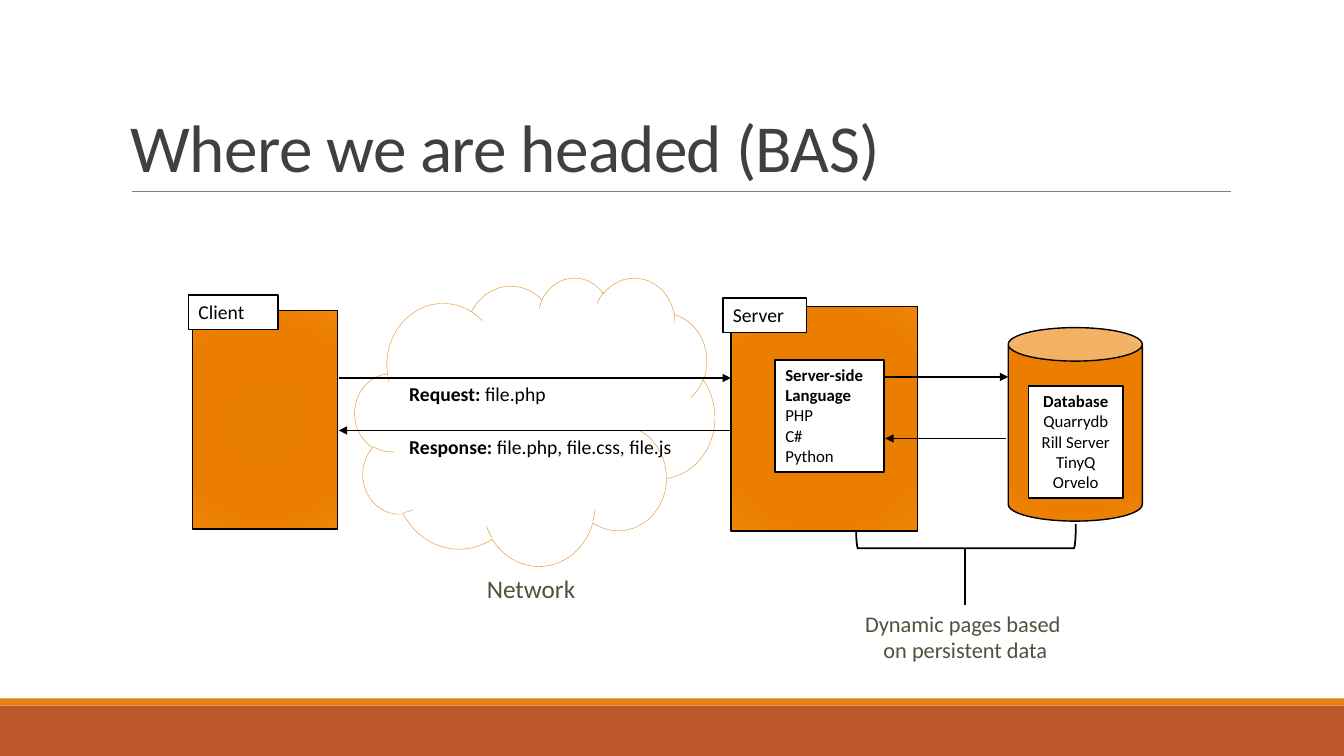
"""Build the slide that shows how a client, a server and a database work together."""
from dataclasses import dataclass

from lxml.etree import SubElement
from pptx import Presentation
from pptx.dml.color import RGBColor
from pptx.enum.shapes import MSO_CONNECTOR, MSO_SHAPE
from pptx.enum.text import MSO_ANCHOR, MSO_AUTO_SIZE, PP_ALIGN
from pptx.oxml.ns import qn
from pptx.util import Emu, Pt

EMU_PER_PX = 9144


@dataclass(frozen=True)
class Theme:
    """Colours, type sizes and line widths of the slide."""
    font: str = "Calibri"
    black: str = "000000"
    white: str = "FFFFFF"
    title: str = "404040"
    caption: str = "4A543E"
    rule: str = "808080"
    orange: str = "E48312"
    rust: str = "BD582C"
    glow: tuple = ((0, "E57B00"), (34, "E87D00"), (70, "EB7E00"), (100, "EF8407"))
    title_size: int = 48
    network_size: int = 18
    caption_size: int = 16
    label_size: int = 14
    list_size: int = 12
    thin: float = 0.25
    rule_width: float = 0.5
    outline: float = 1
    stroke: float = 1.25


THEME = Theme()


def px(*lengths):
    """Turn pixel lengths into EMU."""
    return [Emu(length * EMU_PER_PX) for length in lengths]


def rgb(value):
    """Turn a hex string into a colour."""
    return RGBColor.from_string(value)


def write_text(shape, paragraphs, size=THEME.label_size, color=THEME.black,
               align=PP_ALIGN.LEFT, anchor=MSO_ANCHOR.TOP, wrap=True, grow=True,
               line_spacing=None, tracking=None):
    """Fill a shape with paragraphs, each a list of (text, bold) runs."""
    frame = shape.text_frame
    frame.word_wrap = wrap
    frame.vertical_anchor = anchor
    frame.auto_size = MSO_AUTO_SIZE.SHAPE_TO_FIT_TEXT if grow else MSO_AUTO_SIZE.NONE
    for index, runs in enumerate(paragraphs):
        paragraph = frame.add_paragraph() if index else frame.paragraphs[0]
        paragraph.alignment = align
        paragraph.line_spacing = line_spacing
        for text, bold in runs:
            for line_index, line in enumerate(text.split("\n")):
                if line_index:
                    paragraph.add_line_break()
                if not line:
                    continue
                run = paragraph.add_run()
                run.text = line
                font = run.font
                font.name, font.size, font.bold = THEME.font, Pt(size), bold
                font.color.rgb = rgb(color)
                if tracking:
                    run._r.get_or_add_rPr().set("spc", str(tracking))


def add_text(slide, box, paragraphs, **text_format):
    """Add a text box."""
    write_text(slide.shapes.add_textbox(*px(*box)), paragraphs, **text_format)


def add_figure(slide, kind, box, fill=None, line=None, width=THEME.outline):
    """Add a preset shape with a plain fill and line."""
    shape = slide.shapes.add_shape(kind, *px(*box))
    shape.shadow.inherit = False
    if fill:
        shape.fill.solid()
        shape.fill.fore_color.rgb = rgb(fill)
    else:
        shape.fill.background()
    if line:
        shape.line.color.rgb = rgb(line)
        shape.line.width = Pt(width)
    else:
        shape.line.fill.background()
    return shape


def add_glowing_figure(slide, kind, box):
    """Add an outlined shape with a round orange gradient."""
    shape = add_figure(slide, kind, box, THEME.orange, THEME.black)
    properties = shape._element.spPr
    gradient = SubElement(properties, qn("a:gradFill"), rotWithShape="1")
    stops = SubElement(gradient, qn("a:gsLst"))
    for position, color in THEME.glow:
        stop = SubElement(stops, qn("a:gs"), pos=str(position * 1000))
        SubElement(stop, qn("a:srgbClr"), val=color)
    circle = SubElement(gradient, qn("a:path"), path="circle")
    SubElement(circle, qn("a:fillToRect"), {side: "100000" for side in "ltrb"})
    properties.replace(properties.find(qn("a:solidFill")), gradient)


def add_label(slide, box, paragraphs, **text_format):
    """Add a white outlined box with text."""
    shape = add_figure(slide, MSO_SHAPE.RECTANGLE, box, THEME.white, THEME.black, THEME.stroke)
    write_text(shape, paragraphs, **text_format)


def add_line(slide, start, end, color=THEME.black, width=THEME.stroke, arrow=False):
    """Add a straight line, with an arrowhead at its end if asked."""
    line = slide.shapes.add_connector(MSO_CONNECTOR.STRAIGHT, *px(*start, *end))
    line.line.color.rgb = rgb(color)
    line.line.width = Pt(width)
    if arrow:
        SubElement(line.line._get_or_add_ln(), qn("a:tailEnd"), type="triangle")
    SubElement(line._element.spPr, qn("a:effectLst"))


def add_frame(slide):
    """Add the footer bands, the title and its rule."""
    add_figure(slide, MSO_SHAPE.RECTANGLE, (0, 700, 1333, 50), THEME.rust)
    add_figure(slide, MSO_SHAPE.RECTANGLE, (0, 693, 1333, 7), THEME.orange)
    add_line(slide, (131, 190), (1221, 190), THEME.rule, THEME.rule_width)
    add_text(slide, (120, 31, 1100, 159), [[("Where we are headed (BAS)", False)]],
             size=THEME.title_size, color=THEME.title, anchor=MSO_ANCHOR.BOTTOM,
             grow=False, line_spacing=0.85, tracking=-50)


def add_machines(slide):
    """Add the server, the database and the client."""
    add_glowing_figure(slide, MSO_SHAPE.RECTANGLE, (725, 304, 185, 223))
    add_label(slide, (717, 296, 83, 34), [[("Server", False)]])
    add_glowing_figure(slide, MSO_SHAPE.CAN, (1000, 325, 133, 192))
    add_label(slide, (1020, 383, 94, 111),
              [[("Database\n", True), ("Quarrydb", False)], [("Rill Server", False)],
               [("TinyQ", False)], [("Orvelo", False)]],
              size=THEME.list_size, align=PP_ALIGN.CENTER, wrap=False)
    add_glowing_figure(slide, MSO_SHAPE.RECTANGLE, (191, 308, 144, 217))
    add_label(slide, (187, 293, 89, 34), [[("Client", False)]])
    add_label(slide, (769, 357, 108, 111),
              [[("Server-side \nLanguage", True)], [("PHP", False)],
               [("C#", False)], [("Python", False)]], size=THEME.list_size)


def add_traffic(slide):
    """Add the network cloud and the messages that cross it."""
    add_figure(slide, MSO_SHAPE.CLOUD, (352, 275, 357, 286),
               THEME.white, THEME.orange, THEME.thin)
    add_text(slide, (396, 374, 157, 34),
             [[("Request: ", True), ("file.php", False)]], wrap=False)
    add_text(slide, (396, 427, 283, 34),
             [[("Response: ", True), ("file.php, file.css, file.js", False)]], wrap=False)
    add_text(slide, (473, 564, 109, 40), [[("Network", False)]],
             size=THEME.network_size, color=THEME.caption, wrap=False)
    for start, end in (((336, 375), (725, 375)), ((725, 427), (336, 427)),
                       ((878, 374), (1000, 374)), ((998, 435), (878, 435))):
        add_line(slide, start, end, arrow=True)


def add_bracket_note(slide):
    """Add the bracket under server and database with its caption."""
    bracket = add_figure(slide, MSO_SHAPE.LEFT_BRACKET, (946, 423, 24, 218),
                         line=THEME.black, width=THEME.stroke)
    bracket.rotation = 270
    add_line(slide, (957, 544), (957, 600))
    add_text(slide, (847, 600, 221, 64),
             [[("Dynamic pages based \non persistent data", False)]],
             size=THEME.caption_size, color=THEME.caption,
             align=PP_ALIGN.CENTER, wrap=False)


def main():
    """Build and save the presentation."""
    presentation = Presentation()
    presentation.slide_width, presentation.slide_height = px(1333, 750)
    slide = presentation.slides.add_slide(presentation.slide_layouts[6])
    add_frame(slide)
    add_bracket_note(slide)
    add_machines(slide)
    add_traffic(slide)
    presentation.save("out.pptx")


if __name__ == "__main__":
    main()
